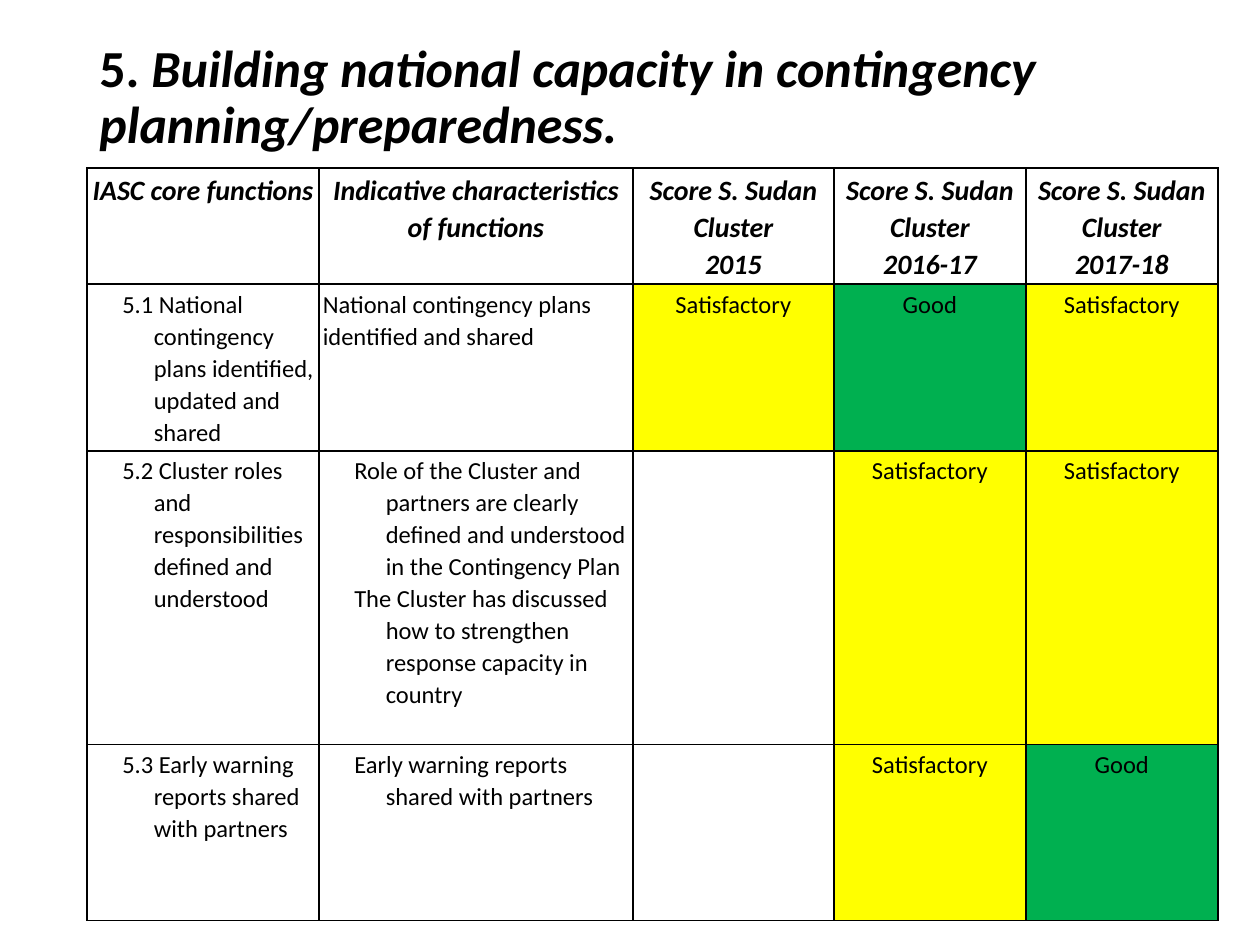
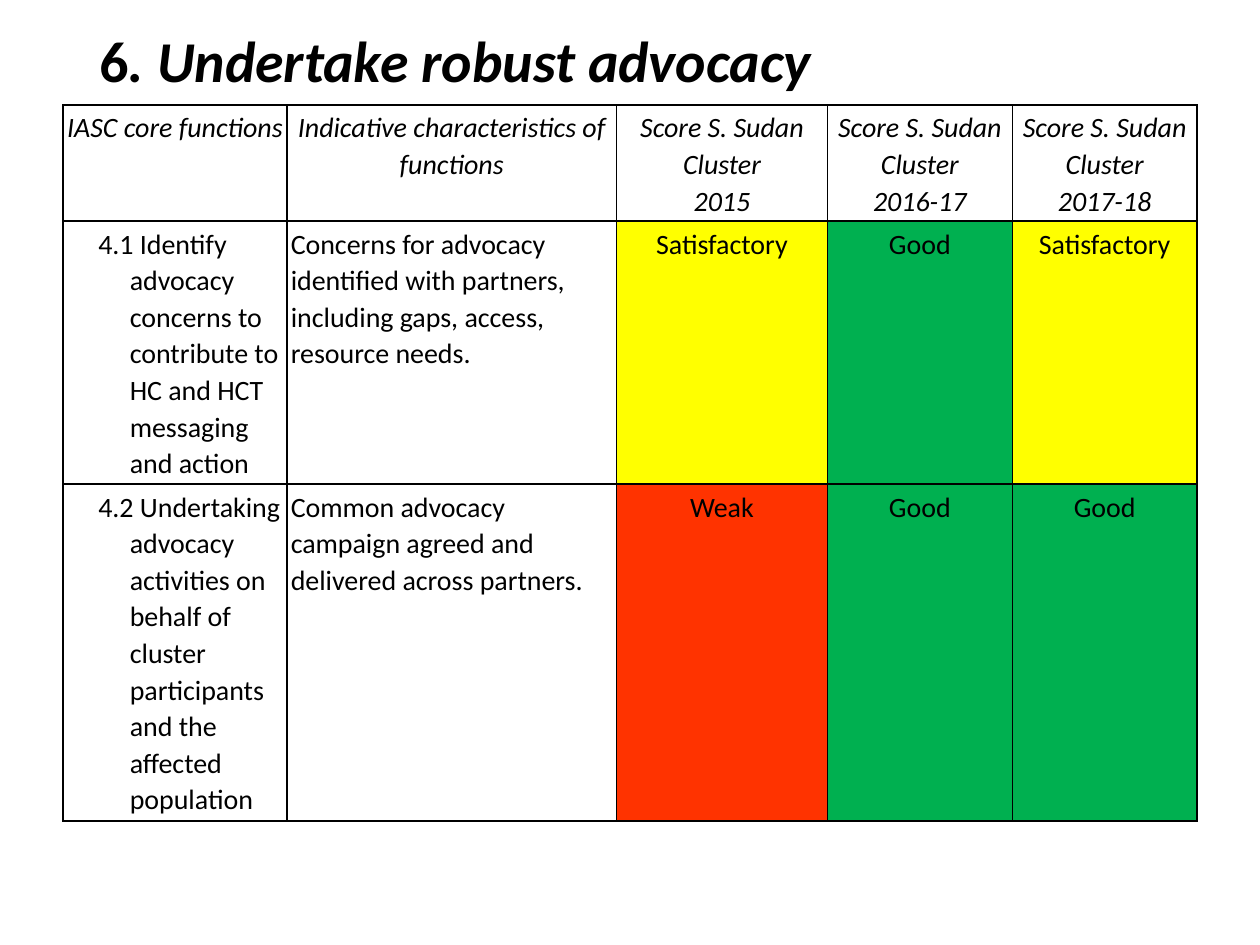
from dataclasses import dataclass

from lxml import etree
from pptx import Presentation
from pptx.dml.color import RGBColor
from pptx.enum import text
from pptx.oxml import ns
from pptx.util import Pt


@dataclass(frozen=True)
class Theme:
    font: str = "Calibri"
    ink: str = "000000"
    header_size: float = 16
    border: float = 1
    cell_margin: float = 2.2
    title_spacing: float = 0.9
    cell_spacing: float = 1.07
    hanging: float = 18


THEME = Theme()
SCORE_FILLS = {"Satisfactory": "FFFF00", "Good": "00B050", "Weak": "FF3300"}
HEADERS = ["IASC core functions", "Indicative characteristics of functions"] + [
    f"Score S. Sudan Cluster\n{year}" for year in ("2015", "2016-17", "2017-18")
]


@dataclass(frozen=True)
class Function:
    name: str
    characteristics: str
    scores: tuple[str, str, str]
    hanging: bool = False


@dataclass(frozen=True)
class ScoreSlide:
    number: str
    title: str
    title_top: float
    title_height: float
    title_size: float
    table_left: float
    table_top: float
    columns: tuple[float, ...]
    rows: tuple[float, ...]
    body_size: float
    bold_header: bool
    functions: tuple[Function, ...]


SLIDES = (
    ScoreSlide(
        "5. ", "Building national capacity in contingency planning/preparedness.",
        title_top=28.8, title_height=55.4, title_size=29.7,
        table_left=49.7, table_top=96,
        columns=(132.6, 179.4, 114.9, 109.7, 109.7), rows=(66.4, 95.2, 168, 100.6),
        body_size=14, bold_header=True,
        functions=(
            Function("5.1 National contingency plans identified, updated and shared",
                     "National contingency plans identified and shared",
                     ("Satisfactory", "Good", "Satisfactory")),
            Function("5.2 Cluster roles and responsibilities defined and understood",
                     "Role of the Cluster and partners are clearly defined and "
                     "understood in the Contingency Plan\n"
                     "The Cluster has discussed how to strengthen response capacity in country",
                     ("", "Satisfactory", "Satisfactory"), hanging=True),
            Function("5.3 Early warning reports shared with partners",
                     "Early warning reports shared with partners",
                     ("", "Satisfactory", "Good"), hanging=True),
        ),
    ),
    ScoreSlide(
        "6", ". Undertake robust advocacy",
        title_top=12.2, title_height=48.2, title_size=33,
        table_left=36, table_top=60,
        columns=(128, 188.3, 120.6, 105.6, 105.6), rows=(66.4, 150.3, 192.5),
        body_size=16, bold_header=False,
        functions=(
            Function("4.1 Identify advocacy concerns to contribute to HC and HCT "
                     "messaging and action",
                     "Concerns for advocacy identified with partners, including gaps, "
                     "access, resource needs.",
                     ("Satisfactory", "Good", "Satisfactory")),
            Function("4.2 Undertaking advocacy activities on behalf of cluster "
                     "participants and the affected population",
                     "Common advocacy campaign agreed and delivered across partners.",
                     ("Weak", "Good", "Good")),
        ),
    ),
)


def add_run(paragraph, content: str, *, size: float, bold: bool = False,
            italic: bool = False) -> None:
    run = paragraph.add_run()
    run.text = content
    font = run.font
    font.name, font.size, font.bold, font.italic = THEME.font, Pt(size), bold, italic
    font.color.rgb = RGBColor.from_string(THEME.ink)


def write_text(frame, content: str, *, centred: bool = False, hanging: bool = False,
               **run_format) -> None:
    """Write each line of content as a paragraph."""
    for index, line in enumerate(content.split("\n")):
        paragraph = frame.add_paragraph() if index else frame.paragraphs[0]
        paragraph.line_spacing = THEME.cell_spacing
        paragraph.alignment = text.PP_ALIGN.CENTER if centred else text.PP_ALIGN.LEFT
        if hanging:
            properties = paragraph._p.get_or_add_pPr()
            properties.set("marL", str(Pt(2 * THEME.hanging)))
            properties.set("indent", str(-Pt(THEME.hanging)))
        add_run(paragraph, line, **run_format)


def add_borders(cell) -> None:
    properties = cell._tc.get_or_add_tcPr()
    for side in ("a:lnL", "a:lnR", "a:lnT", "a:lnB"):
        line = etree.SubElement(properties, ns.qn(side), w=str(Pt(THEME.border)))
        fill = etree.SubElement(line, ns.qn("a:solidFill"))
        etree.SubElement(fill, ns.qn("a:srgbClr"), val=THEME.ink)


def fill_cell(cell, content: str, **text_format) -> None:
    """Set a cell's borders, margins and text, and its score colour if it has one."""
    margin = Pt(THEME.cell_margin)
    cell.margin_left = cell.margin_right = cell.margin_top = cell.margin_bottom = margin
    add_borders(cell)
    if content in SCORE_FILLS:
        cell.fill.solid()
        cell.fill.fore_color.rgb = RGBColor.from_string(SCORE_FILLS[content])
    else:
        cell.fill.background()
    if content:
        write_text(cell.text_frame, content, **text_format)


def add_title(slide, score_slide: ScoreSlide) -> None:
    box = slide.shapes.add_textbox(Pt(49.7), Pt(score_slide.title_top),
                                   Pt(620.6), Pt(score_slide.title_height))
    frame = box.text_frame
    frame.word_wrap = True
    frame.vertical_anchor = text.MSO_ANCHOR.MIDDLE
    paragraph = frame.paragraphs[0]
    paragraph.line_spacing = THEME.title_spacing
    size = score_slide.title_size
    add_run(paragraph, score_slide.number, size=size, bold=True)
    add_run(paragraph, score_slide.title, size=size, bold=True, italic=True)


def add_score_table(slide, score_slide: ScoreSlide) -> None:
    columns, rows = score_slide.columns, score_slide.rows
    table = slide.shapes.add_table(
        len(rows), len(columns), Pt(score_slide.table_left), Pt(score_slide.table_top),
        Pt(sum(columns)), Pt(sum(rows))).table
    table.first_row = table.horz_banding = False
    for column, width in zip(table.columns, columns):
        column.width = Pt(width)
    for row, height in zip(table.rows, rows):
        row.height = Pt(height)
    for index, header in enumerate(HEADERS):
        fill_cell(table.cell(0, index), header, centred=True, size=THEME.header_size,
                  bold=score_slide.bold_header, italic=True)
    size = score_slide.body_size
    for index, function in enumerate(score_slide.functions, start=1):
        fill_cell(table.cell(index, 0), function.name, hanging=True, size=size)
        fill_cell(table.cell(index, 1), function.characteristics,
                  hanging=function.hanging, size=size)
        for column, score in enumerate(function.scores, start=2):
            fill_cell(table.cell(index, column), score, centred=True, size=size)


def main() -> None:
    presentation = Presentation()
    presentation.slide_width, presentation.slide_height = Pt(720), Pt(540)
    for score_slide in SLIDES:
        slide = presentation.slides.add_slide(presentation.slide_layouts[6])
        add_title(slide, score_slide)
        add_score_table(slide, score_slide)
    presentation.save("out.pptx")


if __name__ == "__main__":
    main()
